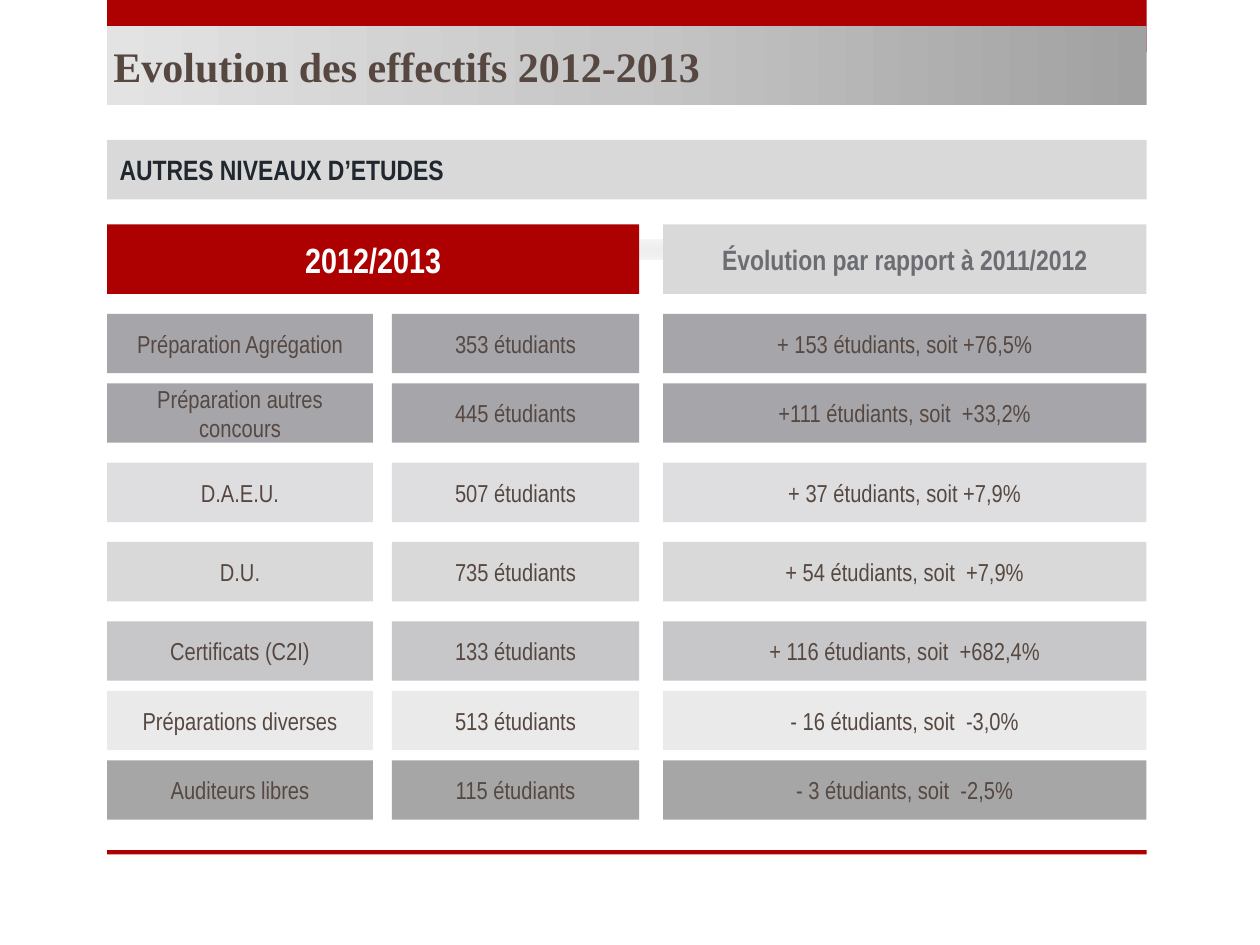
from dataclasses import dataclass

from lxml.etree import SubElement
from pptx import Presentation
from pptx.dml.color import RGBColor
from pptx.enum.shapes import MSO_SHAPE
from pptx.enum.text import MSO_ANCHOR, MSO_AUTO_SIZE, PP_ALIGN
from pptx.oxml import parse_xml
from pptx.oxml.ns import nsdecls, qn
from pptx.util import Pt


@dataclass(frozen=True)
class Theme:
    """Colours, fonts and type sizes of the slide."""
    red: str = "AD0101"
    white: str = "FFFFFF"
    panel: str = "D9D9D9"
    brown: str = "564841"
    navy: str = "21272E"
    slate: str = "6C6C73"
    exam: str = "A5A5AA"
    access: str = "DEDEE0"
    certificate: str = "C7C7CA"
    various: str = "EAEAEA"
    auditor: str = "A6A6A6"
    gradient: tuple = ((0, "A1A1A1"), (50, "C6C6C6"), (100, "E3E3E3"))
    title_font: str = "Times New Roman"
    body_font: str = "Arial Narrow"
    title_size: int = 24
    year_size: int = 20
    heading_size: int = 16
    cell_size: int = 14


THEME = Theme()
LEFT, WIDTH = 61.2, 594
COLUMNS = ((0, 152), (162.7, 141.4), (317.7, 276.2))
ROW_HEIGHT, TIGHT, LOOSE = 34, 5.7, 11.35
ROWS = (
    (0, THEME.exam, "Préparation Agrégation", "353 étudiants", "+ 153 étudiants, soit +76,5%"),
    (TIGHT, THEME.exam, "Préparation autres concours", "445 étudiants", "+111 étudiants, soit  +33,2%"),
    (LOOSE, THEME.access, "D.A.E.U.", "507 étudiants", "+ 37 étudiants, soit +7,9%"),
    (LOOSE, THEME.panel, "D.U.", "735 étudiants", "+ 54 étudiants, soit  +7,9%"),
    (LOOSE, THEME.certificate, "Certificats (C2I)", "133 étudiants", "+ 116 étudiants, soit  +682,4%"),
    (TIGHT, THEME.various, "Préparations diverses", "513 étudiants", "- 16 étudiants, soit  -3,0%"),
    (TIGHT, THEME.auditor, "Auditeurs libres", "115 étudiants", "- 3 étudiants, soit  -2,5%"),
)


def style_text(sp, text, font, size, color, bold=False, align=PP_ALIGN.CENTER):
    """Set one formatted paragraph, centred vertically in its shape."""
    tf = sp.text_frame
    tf.text = text
    tf.word_wrap = True
    tf.auto_size = MSO_AUTO_SIZE.NONE
    tf.vertical_anchor = MSO_ANCHOR.MIDDLE
    p = tf.paragraphs[0]
    p.alignment = align
    r = p.runs[0]
    r.font.name, r.font.size, r.font.bold = font, Pt(size), bold
    r.font.color.rgb = RGBColor.from_string(color)


def add_block(s, box, fill):
    """Add a flat rectangle without outline."""
    sp = s.shapes.add_shape(MSO_SHAPE.RECTANGLE, *map(Pt, box))
    sp.shadow.inherit = False
    sp.fill.solid()
    sp.fill.fore_color.rgb = RGBColor.from_string(fill)
    sp.line.fill.background()
    return sp


def add_frame(s, box):
    """Draw the red band at the top and the thin rule at the bottom."""
    x, y, w, h = box
    add_block(s, (x, y, w, 30), THEME.red)
    add_block(s, (x, y + h - 2.4, w, 2.4), THEME.red)


def add_title(s, box):
    """Place the title placeholder over the band with its grey gradient."""
    sp = s.shapes.title
    sp.element.getparent().append(sp.element)
    sp.left, sp.top, sp.width, sp.height = map(Pt, box)
    sp.fill.gradient()
    sp.fill.gradient_angle = 180
    stops = sp.element.spPr.find(qn("a:gradFill")).find(qn("a:gsLst"))
    stops.clear()
    for percent, color in THEME.gradient:
        stop = SubElement(stops, qn("a:gs"), pos=str(percent * 1000))
        SubElement(stop, qn("a:srgbClr"), val=color)
    style_text(sp, "Evolution des effectifs 2012-2013", THEME.title_font,
               THEME.title_size, THEME.brown, True, PP_ALIGN.LEFT)
    tf = sp.text_frame
    tf.margin_left = tf.margin_right = Pt(3.6)
    tf.margin_top = tf.margin_bottom = Pt(0)


def add_section(s, box):
    """Place the section heading with its perspective shadow."""
    sp = add_block(s, box, THEME.panel)
    style_text(sp, "AUTRES NIVEAUX D’ETUDES", THEME.body_font,
               THEME.heading_size, THEME.navy, True, PP_ALIGN.LEFT)
    sp.element.spPr.find(qn("a:effectLst")).append(parse_xml(
        f'<a:outerShdw {nsdecls("a")} blurRad="{Pt(12)}" dist="{Pt(25)}" '
        'dir="5400000" sx="90000" sy="-19000" rotWithShape="0">'
        '<a:srgbClr val="000000"><a:alpha val="15000"/></a:srgbClr></a:outerShdw>'))


def add_headers(s, box):
    """Place the year heading over two columns and the change heading over the last."""
    x, y, _, h = box
    number_x, number_w = COLUMNS[1]
    change_x, change_w = COLUMNS[2]
    change = add_block(s, (x + change_x, y, change_w, h), THEME.panel)
    style_text(change, "Évolution par rapport à 2011/2012", THEME.body_font,
               THEME.heading_size, THEME.slate, True)
    year = add_block(s, (x, y, number_x + number_w, h), THEME.red)
    style_text(year, "2012/2013", THEME.body_font, THEME.year_size, THEME.white, True)


def add_rows(s, box):
    """Stack the rows of cells down from the top of the box."""
    x, y = box[:2]
    for gap, fill, *texts in ROWS:
        y += gap
        for (dx, w), text in zip(COLUMNS, texts):
            cell = add_block(s, (x + dx, y, w, ROW_HEIGHT), fill)
            style_text(cell, text, THEME.body_font, THEME.cell_size, THEME.brown)
        y += ROW_HEIGHT


def main():
    """Build and save the slide."""
    prs = Presentation()
    prs.slide_width, prs.slide_height = Pt(720), Pt(540)
    s = prs.slides.add_slide(prs.slide_layouts[5])
    add_frame(s, (LEFT, 0, WIDTH, 488.2))
    add_title(s, (LEFT, 15, WIDTH, 45))
    add_section(s, (LEFT, 80, WIDTH, ROW_HEIGHT))
    add_headers(s, (LEFT, 128.2, WIDTH, 39.8))
    add_rows(s, (LEFT, 179.3, WIDTH, 289))
    prs.save("out.pptx")


if __name__ == "__main__":
    main()
